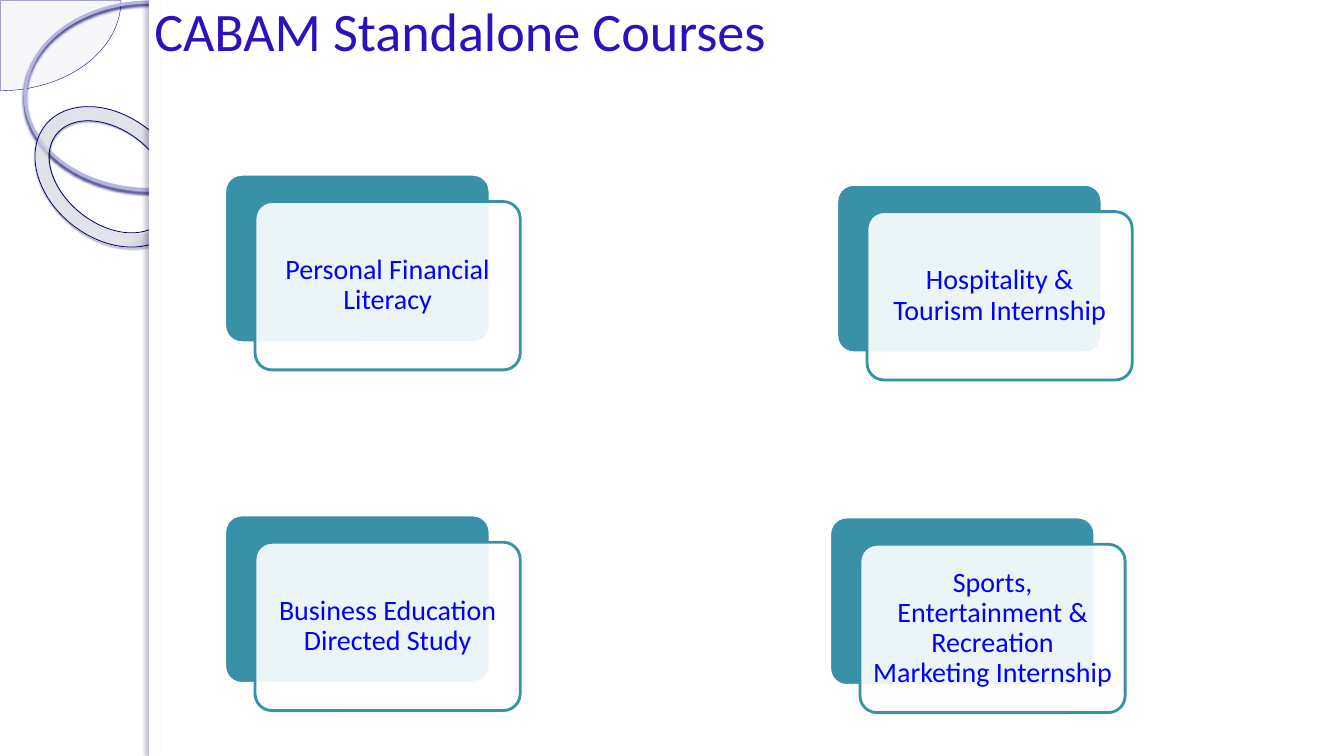
from dataclasses import dataclass

import lxml.etree
import pptx
import pptx.dml.color
import pptx.enum.shapes
import pptx.enum.text
import pptx.oxml
import pptx.oxml.ns
import pptx.shapes.autoshape
import pptx.util

Shape = pptx.shapes.autoshape.Shape
MSO = pptx.enum.shapes.MSO_SHAPE
ALIGN = pptx.enum.text.PP_ALIGN
ANCHOR = pptx.enum.text.MSO_ANCHOR
qn = pptx.oxml.ns.qn


@dataclass(frozen=True)
class Theme:
    font: str = "Calibri"
    title_size: float = 38.7
    card_size: float = 20
    title: str = "2B12BE"
    card_text: str = "0000FF"
    teal: str = "3891A7"
    white: str = "FFFFFF"
    pie: str = "E7E7F1"
    pie_line: str = "00006E"
    ring: str = "B5B5E2"
    ring_shadow: str = "00005F"
    donut_line: str = "000067"
    donut_shadow: str = "00002F"
    edge_shadow: str = "000040"
    # position %, colour, opacity %
    donut_stops: tuple = ((0, "EFEFF8", 70), (70, "F6F6FC", 55), (100, "000071", 60))


@dataclass(frozen=True)
class Box:
    left: int
    top: int
    width: int
    height: int


@dataclass(frozen=True)
class Shadow:
    """Opacity in percent, blur and distance in points, direction in degrees."""
    color: str
    opacity: int
    blur: float
    distance: float
    direction: int


@dataclass(frozen=True)
class Look:
    fill: str | None = None
    opacity: int = 100
    line: str | None = None
    weight: float = 0
    shadow: Shadow | None = None


@dataclass(frozen=True)
class Course:
    name: str
    left: int
    top: int


THEME = Theme()
CARD_W, CARD_H = 263, 167
CARD_DX, CARD_DY = 30, 27
CARD_INSET = 8
BACK_LOOK = Look(THEME.teal, line=THEME.white, weight=2)
FRONT_LOOK = Look(THEME.white, 90, THEME.teal, 2)
COURSES = (
    Course("Personal Financial Literacy", 223, 173),
    Course("Business Education Directed Study", 223, 511),
    Course("Hospitality & Tourism Internship", 830, 183),
    Course("Sports, Entertainment & Recreation Marketing Internship", 823, 513),
)


def px(n: int) -> pptx.util.Emu:
    return pptx.util.Emu(n * 9144)


def rgb(color: str) -> pptx.dml.color.RGBColor:
    return pptx.dml.color.RGBColor.from_string(color)


def place(sp: Shape, box: Box) -> None:
    sp.left, sp.top = px(box.left), px(box.top)
    sp.width, sp.height = px(box.width), px(box.height)


def add_alpha(parent: lxml.etree._Element, opacity: int) -> None:
    clr = parent.find(".//" + qn("a:srgbClr"))
    lxml.etree.SubElement(clr, qn("a:alpha"), val=str(opacity * 1000))


def add_shadow(sp: Shape, shadow: Shadow) -> None:
    effects = sp._element.spPr.find(qn("a:effectLst"))
    outer = lxml.etree.SubElement(
        effects, qn("a:outerShdw"),
        blurRad=str(pptx.util.Pt(shadow.blur)),
        dist=str(pptx.util.Pt(shadow.distance)),
        dir=str(shadow.direction * 60000), algn="ctr", rotWithShape="0")
    lxml.etree.SubElement(outer, qn("a:srgbClr"), val=shadow.color)
    add_alpha(outer, shadow.opacity)


def add_shape(slide: pptx.slide.Slide, kind: MSO, box: Box, look: Look,
              adjustments: tuple[float, ...] = ()) -> Shape:
    sp = slide.shapes.add_shape(kind, 0, 0, 0, 0)
    place(sp, box)
    for i, value in enumerate(adjustments):
        sp.adjustments[i] = value
    if look.fill:
        sp.fill.solid()
        sp.fill.fore_color.rgb = rgb(look.fill)
        if look.opacity < 100:
            add_alpha(sp._element.spPr.find(qn("a:solidFill")), look.opacity)
    else:
        sp.fill.background()
    if look.line:
        sp.line.color.rgb = rgb(look.line)
        sp.line.width = pptx.util.Pt(look.weight)
    else:
        sp.line.fill.background()
    sp.shadow.inherit = False
    if look.shadow:
        add_shadow(sp, look.shadow)
    return sp


def fill_radial(sp: Shape, stops: tuple) -> None:
    """Replace an empty fill by an off-centre circular gradient."""
    gs = "".join(
        f'<a:gs pos="{pos * 1000}"><a:srgbClr val="{color}">'
        f'<a:alpha val="{opacity * 1000}"/></a:srgbClr></a:gs>'
        for pos, color, opacity in stops)
    grad = pptx.oxml.parse_xml(
        f'<a:gradFill {pptx.oxml.ns.nsdecls("a")}><a:gsLst>{gs}</a:gsLst>'
        '<a:path path="circle"><a:fillToRect l="-408000" t="-50000" '
        'r="508000" b="150000"/></a:path></a:gradFill>')
    spPr = sp._element.spPr
    spPr.replace(spPr.find(qn("a:noFill")), grad)


def write(sp: Shape, text: str, size: float, color: str, align: ALIGN) -> None:
    tf = sp.text_frame
    tf.text = text
    tf.word_wrap = True
    tf.auto_size = pptx.enum.text.MSO_AUTO_SIZE.NONE
    tf.vertical_anchor = ANCHOR.MIDDLE
    p = tf.paragraphs[0]
    p.alignment = align
    font = p.runs[0].font
    font.name, font.size = THEME.font, pptx.util.Pt(size)
    font.color.rgb = rgb(color)


def add_side_ornament(slide: pptx.slide.Slide) -> None:
    add_shape(slide, MSO.PIE, Box(-119, -89, 239, 179),
              Look(THEME.pie, 33, THEME.pie_line, 0.25), (0, 54))
    add_shape(slide, MSO.OVAL, Box(25, 2, 248, 186),
              Look(line=THEME.ring, weight=2.15,
                   shadow=Shadow(THEME.ring_shadow, 85, 2, 2, 90)))
    donut = add_shape(slide, MSO.DONUT, Box(27, 115, 164, 121),
                      Look(line=THEME.donut_line, weight=0.58,
                           shadow=Shadow(THEME.donut_shadow, 35, 1, 1.2, 75)), (0.118,))
    donut.rotation = 38.6
    fill_radial(donut, THEME.donut_stops)
    add_shape(slide, MSO.RECTANGLE, Box(148, 0, 1186, 750), Look(THEME.white))
    add_shape(slide, MSO.RECTANGLE, Box(148, 0, 11, 750),
              Look(THEME.white, shadow=Shadow(THEME.edge_shadow, 25, 3, 3, 180)))


def add_title(slide: pptx.slide.Slide, text: str) -> None:
    title = slide.shapes.title
    place(title, Box(143, -16, 687, 92))
    write(title, text, THEME.title_size, THEME.title, ALIGN.LEFT)
    # Bring the title in front of the white panel.
    slide.shapes._spTree.append(title._element)


def add_course(slide: pptx.slide.Slide, course: Course) -> None:
    back = Box(course.left, course.top, CARD_W, CARD_H)
    front = Box(course.left + CARD_DX, course.top + CARD_DY, CARD_W, CARD_H)
    add_shape(slide, MSO.ROUNDED_RECTANGLE, back, BACK_LOOK, (0.1,))
    card = add_shape(slide, MSO.ROUNDED_RECTANGLE, front, FRONT_LOOK, (0.1,))
    write(card, course.name, THEME.card_size, THEME.card_text, ALIGN.CENTER)
    tf = card.text_frame
    tf.margin_left = tf.margin_right = tf.margin_top = tf.margin_bottom = px(CARD_INSET)
    tf.paragraphs[0].line_spacing = 0.9


def main() -> None:
    prs = pptx.Presentation()
    prs.slide_width, prs.slide_height = px(1333), px(750)
    slide = prs.slides.add_slide(prs.slide_layouts.get_by_name("Title Only"))
    add_side_ornament(slide)
    add_title(slide, "CABAM Standalone Courses")
    for course in COURSES:
        add_course(slide, course)
    prs.save("out.pptx")


if __name__ == "__main__":
    main()
